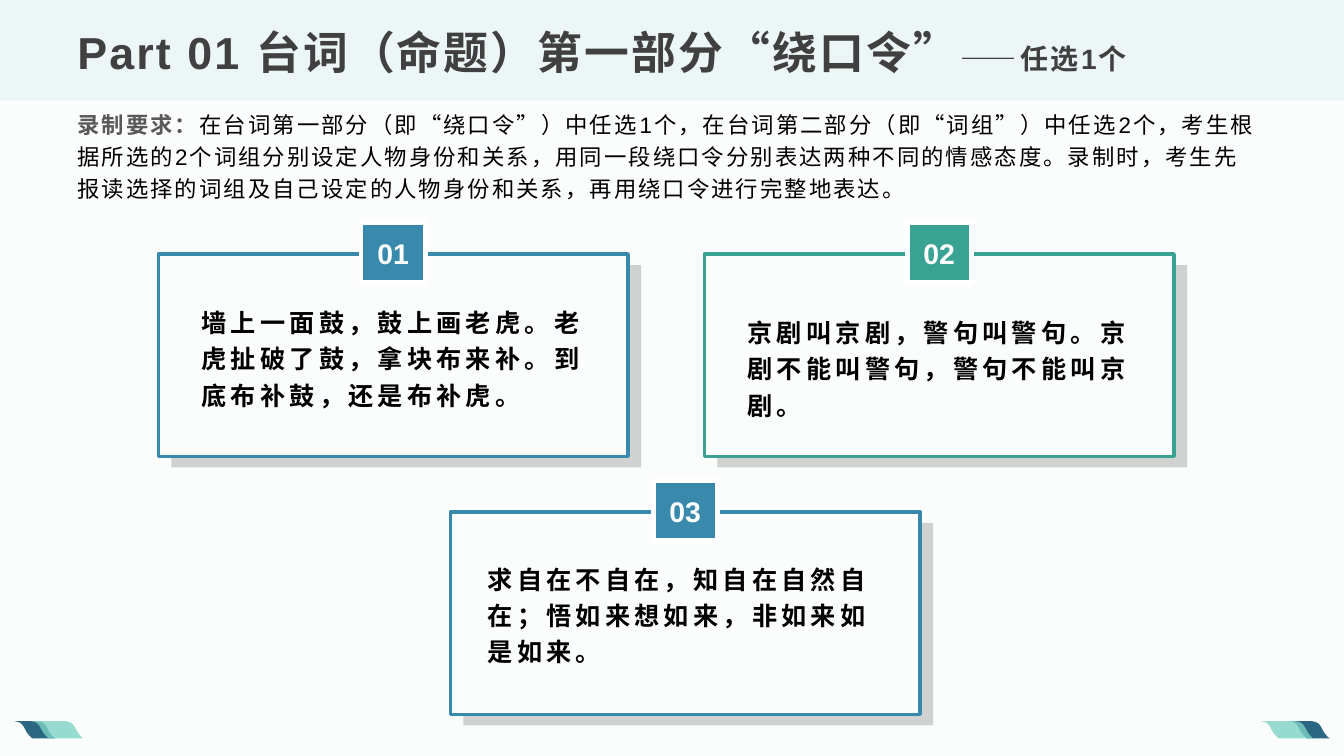
"""Build the tongue-twister slide with three numbered cards."""
from lxml import etree
from pptx import Presentation
from pptx import util as u
from pptx.dml.color import RGBColor
from pptx.enum import shapes, text
from pptx.oxml import ns

PAPER = RGBColor(0xFB, 0xFC, 0xFC)
BAND = RGBColor(0xED, 0xF6, 0xF7)
BLUE = RGBColor(0x39, 0x89, 0xAD)
GREEN = RGBColor(0x38, 0xA2, 0x93)
NAVY = RGBColor(0x2B, 0x67, 0x82)
MINT = RGBColor(0x7D, 0xD2, 0xC6)
SHADE = RGBColor(0xBF, 0xBF, 0xBF)
WHITE = RGBColor(0xFF, 0xFF, 0xFF)
BLACK = RGBColor(0, 0, 0)
DARK = RGBColor(0x40, 0x40, 0x40)
GREY = RGBColor(0x59, 0x59, 0x59)
CJK = "Noto Sans CJK SC"
TOP, BOTTOM = text.MSO_ANCHOR.TOP, text.MSO_ANCHOR.BOTTOM

deck = Presentation()
deck.slide_width, deck.slide_height = u.Cm(33.87), u.Cm(19.05)
slide = deck.slides.add_slide(deck.slide_layouts[6])
slide.background.fill.solid()
slide.background.fill.fore_color.rgb = PAPER
items = slide.shapes


def paint(shape, fill, alpha=100, line=None, width=0):
    shape.shadow.inherit = False
    shape.fill.solid()
    shape.fill.fore_color.rgb = fill
    if alpha < 100:
        tint = shape._element.spPr.find(ns.qn("a:solidFill"))[0]
        etree.SubElement(tint, ns.qn("a:alpha")).set("val", str(alpha * 1000))
    if line is None:
        shape.line.fill.background()
    else:
        shape.line.color.rgb = line
        shape.line.width = u.Pt(width)


def write(area, runs, frame=None, para=None):
    block = items.add_textbox(*map(u.Cm, area)).text_frame
    first = block.paragraphs[0]
    for target, form in (
        (block, {"word_wrap": True, **(frame or {})}),
        (first, {"line_spacing": 1.2, **(para or {})}),
    ):
        for key, value in form.items():
            setattr(target, key, value)
    for words, size, color, bold, gap, face in runs:
        run = first.add_run()
        run.text = words
        form = {"size": u.Pt(size), "bold": bold, "name": face}
        for key, value in form.items():
            setattr(run.font, key, value)
        run.font.color.rgb = color
        props = run.font._element
        props.set("spc", str(int(gap * 100)))
        etree.SubElement(props, ns.qn("a:ea")).set("typeface", CJK)


RECT = shapes.MSO_SHAPE.RECTANGLE
paint(items.add_shape(RECT, 0, 0, deck.slide_width, u.Cm(2.54)), BAND)

TALL = 0.44
curves = (
    ((0, 0), (0.15, 0.03), (0.2, 0.05), (0.28, 0.22)),
    ((0.28, 0.22), (0.36, 0.37), (0.46, TALL), (0.46, TALL)),
)
edge = []
for curve in curves:
    for step in range(9):
        t = step / 8
        mix = ((1 - t) ** 3, 3 * t * (1 - t) ** 2, 3 * t * t * (1 - t), t ** 3)
        edge.append([sum(m * p[i] for m, p in zip(mix, curve)) for i in (0, 1)])
for left, wide, fill, alpha in (
    (0.36, 1.03, NAVY, 100),
    (0.77, 1.33, MINT, 80),
    (32.48, 1.03, NAVY, 100),
    (31.77, 1.33, MINT, 80),
):
    right = [(wide - 0.46 + x, y) for x, y in edge]
    ring = [(u.Cm(left + x), u.Cm(18.17 + y)) for x, y in right + edge[::-1]]
    leaf = items.build_freeform(*ring[0])
    leaf.add_line_segments(ring[1:])
    paint(leaf.convert_to_shape(), fill, alpha)

tight = {"vertical_anchor": BOTTOM, "margin_bottom": 0}
cards = (
    (3.99, 6.4, BLUE, (4.83, 7.52, 10.16, 2.82), tight, "Arial",
     "墙上一面鼓，鼓上画老虎。老虎扯破了鼓，拿块布来补。到底布补鼓，还是布补虎。"),
    (17.75, 6.4, GREEN, (18.59, 7.57, 10.16, 3.02), tight, "Arial",
     "京剧叫京剧，警句叫警句。京剧不能叫警句，警句不能叫京剧。"),
    (11.35, 12.9, BLUE, (12.04, 13.94, 10.82, 3.02), {"vertical_anchor": TOP}, CJK,
     "求自在不自在，知自在自然自在；悟如来想如来，非如来如是如来。"),
)
for num, (x, y, hue, area, frame, face, words) in enumerate(cards, 1):
    for dx, dy, wide, tall, look in (
        (0.33, 0.28, 11.84, 5.1, (SHADE, 70)),
        (0, 0, 11.84, 5.1, (PAPER, 100, hue, 2.5)),
        (5.11, -0.79, 1.63, 1.52, (hue, 100, WHITE, 3.5)),
    ):
        place = map(u.Cm, (x + dx, y + dy, wide, tall))
        paint(items.add_shape(RECT, *place), *look)
    write((x + 5.27, y - 0.74, 1.3, 1.45),
          [(f"{num:02}", 20.3, WHITE, True, 0, "Arial")],
          {"word_wrap": False}, {"alignment": text.PP_ALIGN.CENTER})
    write(area, [(words, 18, BLACK, True, 3, face)], frame)

write((1.7, 0.43, 30.48, 1.7), [
    ("Part 01 台词（命题）第一部分“绕口令”", 32, DARK, True, 1.5, "Arial"),
    ("——任选1个", 20, DARK, True, 1.5, "Arial"),
], {"vertical_anchor": BOTTOM}, {"line_spacing": 0.9})
write((1.7, 2.54, 30.3, 2.72), [
    ("录制要求：", 16, GREY, True, 1.5, "Arial"),
    ("在台词第一部分（即“绕口令”）中任选1个，在台词第二部分（即“词组”）中任选2个，"
     "考生根据所选的2个词组分别设定人物身份和关系，用同一段绕口令分别表达两种不同的"
     "情感态度。录制时，考生先报读选择的词组及自己设定的人物身份和关系，"
     "再用绕口令进行完整地表达。", 16, BLACK, False, 1.5, "Arial"),
])

deck.save("out.pptx")
